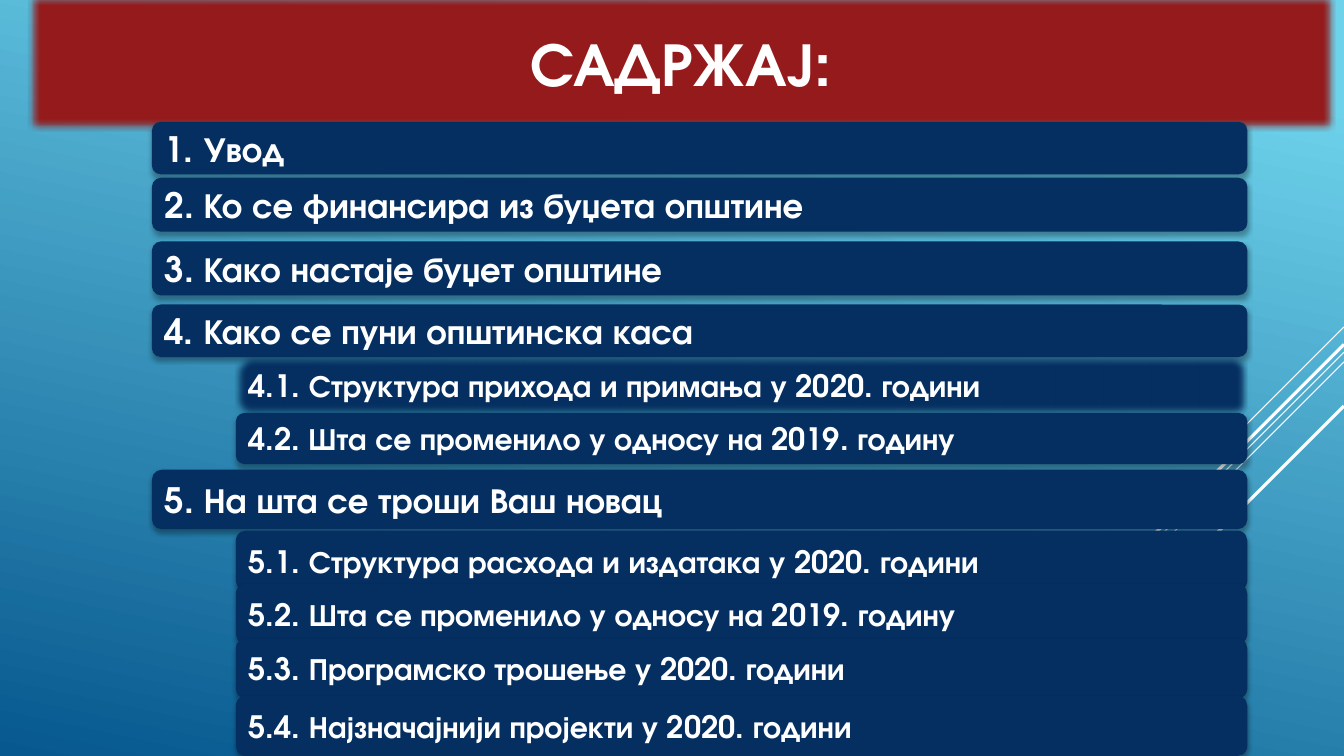
from pptx import Presentation
from pptx.dml.color import RGBColor
from pptx.enum.shapes import MSO_CONNECTOR as Link, MSO_SHAPE as Kind
from pptx.enum.text import MSO_ANCHOR as Anchor, PP_ALIGN as Align
from pptx.oxml import parse_xml
from pptx.util import Pt

WIDE, HIGH = 960, 540
FACE = "TeX Gyre Adventor"
NAVY, RED, WHITE = "052F61", "941A1B", "FFFFFF"
SKY = [(0.1, "6ED2EB"), (1, "06588E")]
NS = 'xmlns:a="http://schemas.openxmlformats.org/drawingml/2006/main"'
SHADE = ('<a:outerShdw blurRad="44450" dist="27940" dir="5400000" algn="ctr" rotWithShape="0">'
         '<a:srgbClr val="000000"><a:alpha val="32000"/></a:srgbClr></a:outerShdw>')
SOFT = '<a:softEdge rad="63500"/>'

HEAD = "САДРЖАЈ:"
MAIN = {"left": 108.5, "size": 25}
SUB = {"left": 168.5, "size": 22}
RIGHT = 891
ITEMS = [
    ("1. Увод", MAIN, 87, 37.5, SHADE),
    ("2. Ко се финансира из буџета општине", MAIN, 127, 38.5, SHADE),
    ("3. Како настаје буџет општине", MAIN, 172.5, 38.5, SHADE),
    ("4. Како се пуни општинска каса", MAIN, 217.5, 37.5, SHADE),
    ("4.1. Структура прихода и примања у 2020. години", SUB, 253.5, 43, SHADE + SOFT),
    ("4.2. Шта се променило у односу на 2019. годину", SUB, 295, 36.5, SHADE),
    ("5. На шта се троши Ваш новац", MAIN, 335.5, 42.5, SHADE),
    ("5.1. Структура расхода и издатака у 2020. години", SUB, 379, 43, SHADE),
    ("5.2. Шта се променило у односу на 2019. годину", SUB, 417, 43, SHADE),
    ("5.3. Програмско трошење у 2020. години", SUB, 456, 43, SHADE),
    ("5.4. Најзначајнији пројекти у 2020. години", SUB, 497, 43, SHADE),
]
RAYS = [(233.5, 72, 0.75), (251.5, 235, 0.75), (258.5, 149, 0.75),
        (246, 137.5, 2.25), (290, 100, 2.25)]


def tint(code):
    return RGBColor.from_string(code)


def style(item, spec):
    for name, value in spec.items():
        setattr(item, name, value)


def effect(shape, inner=""):
    props = shape._element.spPr
    for old in props.findall("{*}effectLst"):
        props.remove(old)
    props.append(parse_xml(f"<a:effectLst {NS}>{inner}</a:effectLst>"))


def paint(shape, code):
    shape.fill.solid()
    shape.fill.fore_color.rgb = tint(code)


def write(shape, text, size, align):
    frame = shape.text_frame
    frame.text = text
    style(frame, {"word_wrap": True, "vertical_anchor": Anchor.MIDDLE})
    para = frame.paragraphs[0]
    para.alignment = align
    font = para.runs[0].font
    style(font, {"name": FACE, "size": Pt(size), "bold": True})
    font.color.rgb = tint(WHITE)


def draw_sky(slide):
    fill = slide.background.fill
    fill.gradient()
    fill.gradient_angle = 258
    for stop, (spot, code) in zip(fill.gradient_stops, SKY):
        stop.position = spot
        stop.color.rgb = tint(code)


def draw_rays(slide):
    for top, span, width in RAYS:
        ray = slide.shapes.add_connector(
            Link.STRAIGHT, Pt(WIDE), Pt(top), Pt(WIDE - span), Pt(top + span))
        ray.line.color.rgb = tint(WHITE)
        ray.line.width = Pt(width)
        effect(ray)


def draw_head(slide):
    head = slide.shapes.title
    style(head, {"left": Pt(20), "top": Pt(-5), "width": Pt(933), "height": Pt(98)})
    head._element.spPr.append(parse_xml(
        f'<a:prstGeom {NS} prst="horizontalScroll"><a:avLst/></a:prstGeom>'))
    paint(head, RED)
    head.line.color.rgb = tint(NAVY)
    head.line.width = Pt(1.25)
    effect(head, SOFT)
    write(head, HEAD, 44, Align.CENTER)


def draw_items(slide):
    for text, level, top, high, look in ITEMS:
        left = level["left"]
        bar = slide.shapes.add_shape(
            Kind.ROUNDED_RECTANGLE, Pt(left), Pt(top), Pt(RIGHT - left), Pt(high))
        paint(bar, NAVY)
        bar.line.fill.background()
        effect(bar, look)
        write(bar, text, level["size"], Align.LEFT)


def main():
    deck = Presentation()
    style(deck, {"slide_width": Pt(WIDE), "slide_height": Pt(HIGH)})
    slide = deck.slides.add_slide(deck.slide_layouts[5])
    draw_sky(slide)
    draw_rays(slide)
    draw_head(slide)
    draw_items(slide)
    deck.save("out.pptx")


if __name__ == "__main__":
    main()
